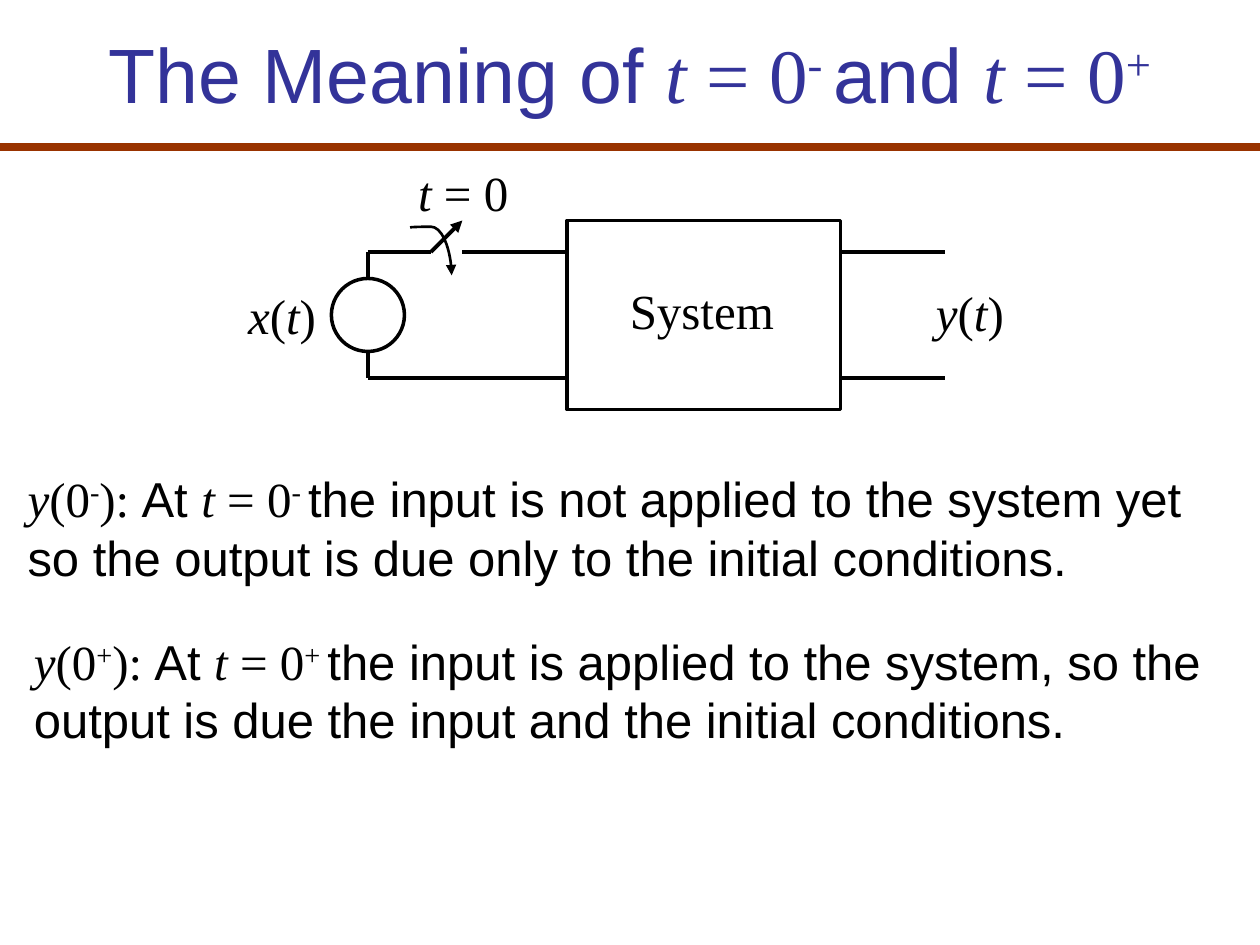
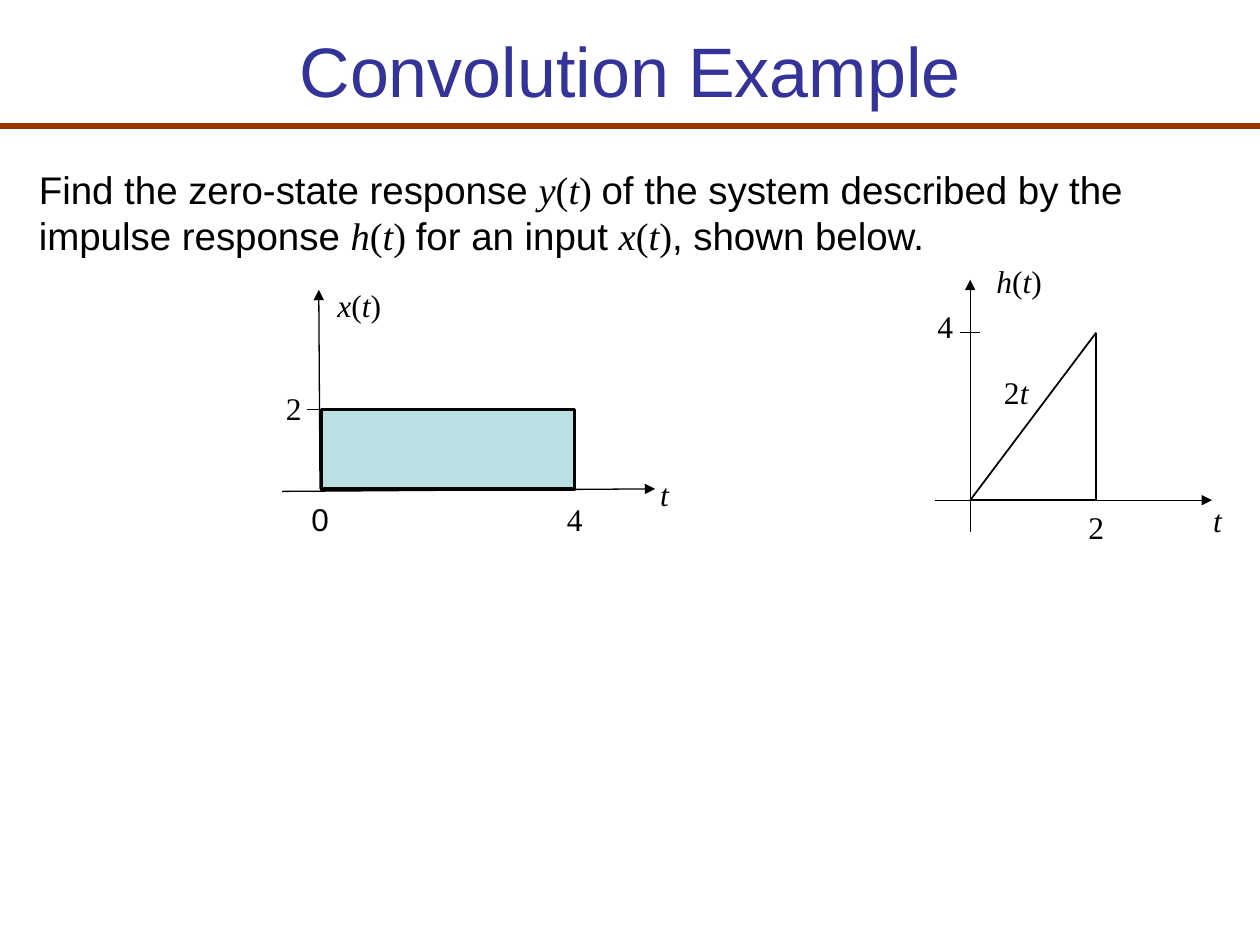
from itertools import pairwise

from lxml.etree import SubElement
from pptx import Presentation
from pptx.dml.color import RGBColor as Rgb
from pptx.enum.shapes import MSO_CONNECTOR as Link, MSO_SHAPE as Kind
from pptx.enum.text import MSO_ANCHOR as Anchor, PP_ALIGN as Align
from pptx.oxml.ns import qn
from pptx.util import Inches, Pt

COLORS = {"title": "333399", "rule": "993300", "ink": "000000", "pulse": "BBE0E3"}
SANS, SERIF = "Arial", "Times New Roman"


def sans(text):
    return text, SANS, False, False


def roman(text):
    return text, SERIF, False, False


def var(text):
    return text, SERIF, True, False


def sup(text):
    return text, SERIF, False, True


def signal(name, end=")"):
    return [var(name), roman("("), var("t"), roman(end)]


def moment(sign, text):
    return [var("y"), roman("(0"), sup(sign), roman("): "), sans("At "),
            var("t "), roman("= 0"), sup(sign + " "), sans(text)]


class Deck:
    def __init__(self):
        self.file = Presentation()
        self.file.slide_width = Inches(10)
        self.file.slide_height = Inches(7.5)

    def page(self, title, size, height, rule, weight):
        self.slide = self.file.slides.add_slide(self.file.slide_layouts[6])
        self.text(title, 0.5, 0.08, 9, height, size, "title", True,
                  Align.CENTER, Anchor.MIDDLE)
        self.line((0, rule), (10, rule), weight, color="rule")

    def text(self, runs, x, y, w, h, size, color="ink", wrap=False,
             align=Align.LEFT, anchor=Anchor.TOP):
        box = self.slide.shapes.add_textbox(Inches(x), Inches(y), Inches(w), Inches(h))
        frame = box.text_frame
        frame.word_wrap = wrap
        frame.vertical_anchor = anchor
        para = frame.paragraphs[0]
        para.alignment = align
        para.font.size = Pt(size)
        para.font.color.rgb = Rgb.from_string(COLORS[color])
        fonts = {face for _, face, _, _ in runs}
        if len(fonts) == 1:
            para.font.name = fonts.pop()
        for words, face, slant, raised in runs:
            run = para.add_run()
            run.text = words
            if para.font.name is None:
                run.font.name = face
            if slant:
                run.font.italic = True
            if raised:
                run.font._element.set("baseline", "30000")

    def line(self, start, end, width, arrow=False, color="ink", kind=Link.STRAIGHT):
        link = self.slide.shapes.add_connector(
            kind, *(Inches(n) for n in (*start, *end)))
        link.line.width = Pt(width)
        link.line.color.rgb = Rgb.from_string(COLORS[color])
        if arrow:
            SubElement(link.line._get_or_add_ln(), qn("a:tailEnd"), type="triangle")
        SubElement(link._element.spPr, qn("a:effectLst"))
        return link

    def chain(self, points, width):
        for start, end in pairwise(points):
            self.line(start, end, width)

    def swing(self, start, end, width, bend):
        props = self.line(start, end, width, True, kind=Link.CURVE)._element.spPr
        props.find(qn("a:xfrm")).set("rot", str(270 * 60000))
        guides = props.find(qn("a:prstGeom")).find(qn("a:avLst"))
        SubElement(guides, qn("a:gd"), name="adj1", fmla=f"val {bend}")

    def shape(self, kind, x, y, w, h, fill=None):
        item = self.slide.shapes.add_shape(
            kind, Inches(x), Inches(y), Inches(w), Inches(h))
        item.shadow.inherit = False
        if fill:
            item.fill.solid()
            item.fill.fore_color.rgb = Rgb.from_string(COLORS[fill])
        else:
            item.fill.background()
        item.line.width = Pt(2)
        item.line.color.rgb = Rgb.from_string(COLORS["ink"])


def meaning(deck):
    time = [var("t"), roman(" = 0")]
    title = [sans("The Meaning of "), *time, sup("- "), sans("and "), *time, sup("+")]
    deck.page(title, 44, 1, 1.17, 4.5)

    deck.shape(Kind.OVAL, 2.63, 2.21, 0.58, 0.58)
    deck.shape(Kind.RECTANGLE, 4.5, 1.75, 2.17, 1.5)
    top, low, wire = 2, 3, 2.25
    deck.chain([(2.92, 2.21), (2.92, top), (3.42, top)], wire)
    deck.line((3.67, top), (4.5, top), wire)
    deck.line((3.42, top), (3.67, 1.75), wire, True)
    deck.chain([(2.92, 2.79), (2.92, low), (4.5, low)], wire)
    for y in (top, low):
        deck.line((6.67, y), (7.5, y), wire)
    deck.swing((3.61, 1.83), (3.23, 2.16), 1.5, -1600)

    for runs, x, y, w in [
        (time, 3.22, 1.24, 0.92),
        (signal("x"), 1.87, 2.22, 0.75),
        (signal("y"), 7.33, 2.19, 0.75),
        ([roman("System")], 4.9, 2.18, 1.36),
    ]:
        deck.text(runs, x, y, w, 0.57, 28)

    for sign, x, y, words in [
        ("-", 0.12, 3.67, "the input is not applied to the system yet "
                          "so the output is due only to the initial conditions."),
        ("+", 0.17, 4.96, "the input is applied to the system, "
                          "so the output is due the input and the initial conditions."),
    ]:
        deck.text(moment(sign, words), x, y, 9.75, 1.04, 28, wrap=True)


def example(deck):
    deck.page([sans("Convolution Example")], 40, 0.95, 1, 3)
    task = [sans("Find the zero-state response "), *signal("y", ") "),
            sans("of the system described by the impulse response "),
            *signal("h", ") "), sans("for an input "), *signal("x"),
            sans(", shown below.")]
    deck.text(task, 0.21, 1.27, 9.58, 0.84, 22, wrap=True)

    for start, end in [
        ((7.42, 3.97), (9.62, 3.97)),
        ((7.7, 4.22), (7.7, 2.22)),
        ((2.24, 3.9), (5.2, 3.88)),
        ((2.54, 3.88), (2.53, 2.3)),
    ]:
        deck.line(start, end, 0.75, True)

    ramp = [(7.7, 3.97), (8.7, 2.64), (8.7, 3.97)]
    deck.chain([*ramp, ramp[0]], 1)
    deck.shape(Kind.RECTANGLE, 2.55, 3.25, 2.01, 0.63, "pulse")
    for x, y in [(7.62, 2.64), (2.44, 3.25)]:
        deck.line((x + 0.16, y), (x, y), 1)

    for runs, x, y, w in [
        ([roman("2")], 8.54, 3.98, 0.32),
        (signal("h"), 7.81, 2.03, 0.58),
        ([roman("4")], 7.34, 2.39, 0.32),
        ([var("t")], 9.53, 3.93, 0.27),
        ([roman("2"), var("t")], 7.87, 2.91, 0.4),
        (signal("x"), 2.58, 2.22, 0.55),
        ([roman("4")], 4.4, 3.92, 0.32),
        ([roman("2")], 2.17, 3.04, 0.32),
        ([var("t")], 5.14, 3.72, 0.27),
    ]:
        deck.text(runs, x, y, w, 0.4, 18)
    deck.text([sans("0")], 2.19, 3.92, 0.7, 0.4, 18, wrap=True, align=Align.CENTER)


def main():
    deck = Deck()
    meaning(deck)
    example(deck)
    deck.file.save("out.pptx")


if __name__ == "__main__":
    main()
